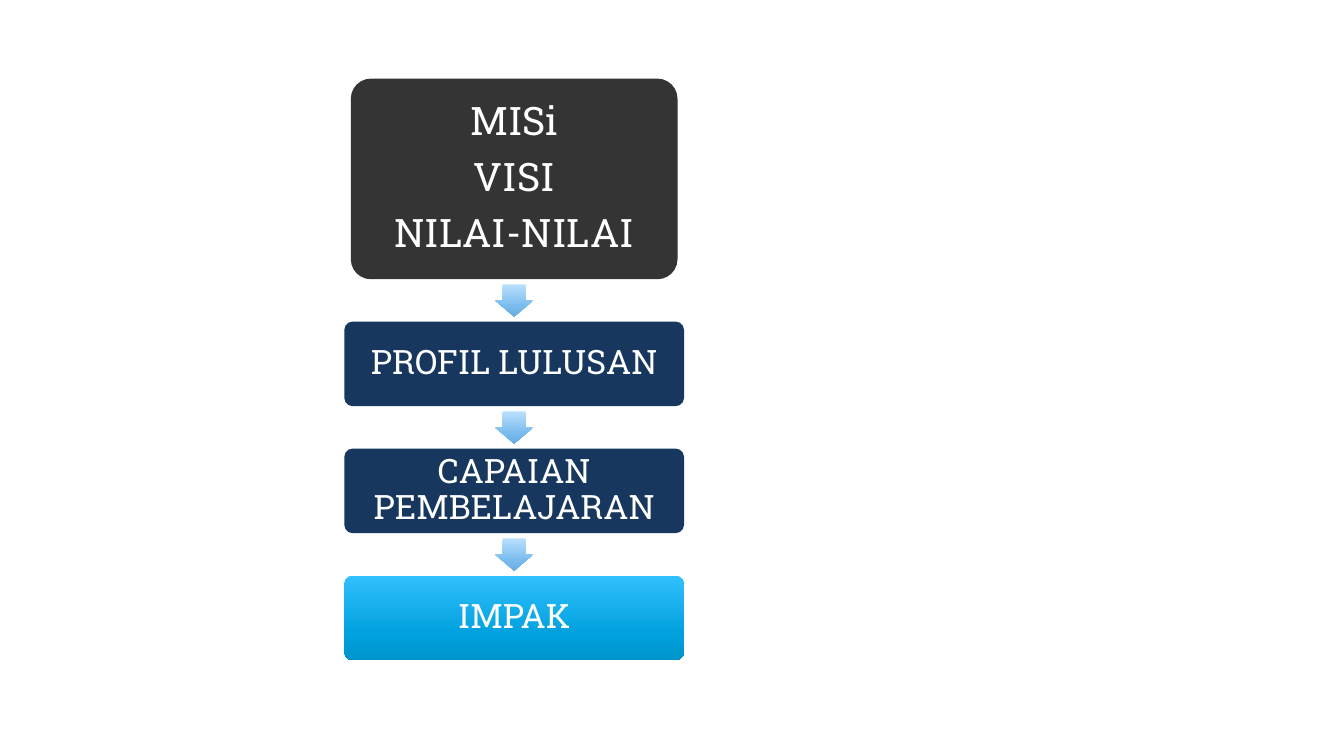
from copy import deepcopy
from dataclasses import dataclass

from pptx import Presentation
from pptx.dml.color import RGBColor
from pptx.dml.fill import FillFormat
from pptx.enum.shapes import MSO_SHAPE
from pptx.enum.text import MSO_ANCHOR, PP_ALIGN
from pptx.oxml.ns import qn
from pptx.oxml.xmlchemy import OxmlElement
from pptx.shapes.autoshape import Shape
from pptx.slide import Slide
from pptx.util import Inches, Pt

WHITE = RGBColor(0xFF, 0xFF, 0xFF)
CHARCOAL = RGBColor(0x34, 0x34, 0x34)
NAVY = RGBColor(0x17, 0x37, 0x5E)
SKY = (RGBColor(0xBA, 0xE0, 0xFD), RGBColor(0x79, 0xBB, 0xED), RGBColor(0x69, 0xAC, 0xDF))
AZURE = (RGBColor(0x32, 0xBF, 0xFE), RGBColor(0x00, 0xA1, 0xDE), RGBColor(0x00, 0x94, 0xCB))
STOP_POSITIONS = (0, 0.69, 1)

CENTER = 5.1
FIRST_TOP = 0.78
GAP = 0.42
ARROW_WIDTH, ARROW_HEIGHT = 0.38, 0.32

Paint = RGBColor | tuple[RGBColor, ...]


@dataclass(frozen=True)
class Stage:
    lines: tuple[str, ...]
    paint: Paint
    width: float = 3.37
    height: float = 0.84
    size: int = 24
    inset: float = 0.1


STAGES = (
    Stage(("MISi", "VISI", "NILAI-NILAI"), CHARCOAL, 3.24, 1.99, 28, 0.12),
    Stage(("PROFIL LULUSAN",), NAVY),
    Stage(("CAPAIAN PEMBELAJARAN",), NAVY),
    Stage(("IMPAK",), AZURE),
)


def apply_gradient(shape: Shape, fill: FillFormat, colors: tuple[RGBColor, ...]) -> None:
    fill.gradient()
    fill.gradient_angle = 270
    stop_list = shape.element.spPr.find(qn("a:gradFill")).find(qn("a:gsLst"))
    stop_list.append(deepcopy(stop_list[0]))
    for stop, position, color in zip(fill.gradient_stops, STOP_POSITIONS, colors):
        stop.position = position
        stop.color.rgb = color


def add_centered(page: Slide, kind: MSO_SHAPE, top: float, width: float,
                 height: float, paint: Paint) -> Shape:
    shape = page.shapes.add_shape(kind, Inches(CENTER - width / 2), Inches(top),
                                  Inches(width), Inches(height))
    shape.shadow.inherit = False
    shape.line.fill.background()
    if isinstance(paint, RGBColor):
        shape.fill.solid()
        shape.fill.fore_color.rgb = paint
    else:
        apply_gradient(shape, shape.fill, paint)
    return shape


def write_text(box: Shape, lines: tuple[str, ...], *, size: int, inset: float,
               font: str = "Roboto Slab", color: RGBColor = WHITE) -> None:
    frame = box.text_frame
    frame.word_wrap = True
    frame.vertical_anchor = MSO_ANCHOR.MIDDLE
    frame.margin_left = frame.margin_right = Inches(inset)
    frame.margin_top = frame.margin_bottom = Inches(inset)
    frame.text = "\n".join(lines)
    for para in frame.paragraphs:
        para.alignment = PP_ALIGN.CENTER
        para.line_spacing = 0.9
        para.space_after = Pt(0)
        spacing = para._p.pPr.find(qn("a:spcAft"))
        spacing.remove(spacing[0])
        percent = OxmlElement("a:spcPct")
        percent.set("val", "35000")
        spacing.append(percent)
        for span in para.runs:
            span.font.name = font
            span.font.size = Pt(size)
            span.font.color.rgb = color


def add_stage(page: Slide, stage: Stage, top: float) -> None:
    box = add_centered(page, MSO_SHAPE.ROUNDED_RECTANGLE, top, stage.width,
                       stage.height, stage.paint)
    box.adjustments[0] = 0.1
    write_text(box, stage.lines, size=stage.size, inset=stage.inset)


def add_arrow(page: Slide, gap_top: float) -> None:
    arrow = add_centered(page, MSO_SHAPE.DOWN_ARROW, gap_top + (GAP - ARROW_HEIGHT) / 2,
                         ARROW_WIDTH, ARROW_HEIGHT, SKY)
    arrow.adjustments[0] = 0.6
    arrow.adjustments[1] = 0.5


def main() -> None:
    deck = Presentation()
    deck.slide_width = Inches(13.33)
    deck.slide_height = Inches(7.5)
    page = deck.slides.add_slide(deck.slide_layouts[6])
    top = FIRST_TOP
    for index, stage in enumerate(STAGES):
        if index:
            add_arrow(page, top - GAP)
        add_stage(page, stage, top)
        top += stage.height + GAP
    deck.save("out.pptx")


if __name__ == "__main__":
    main()
